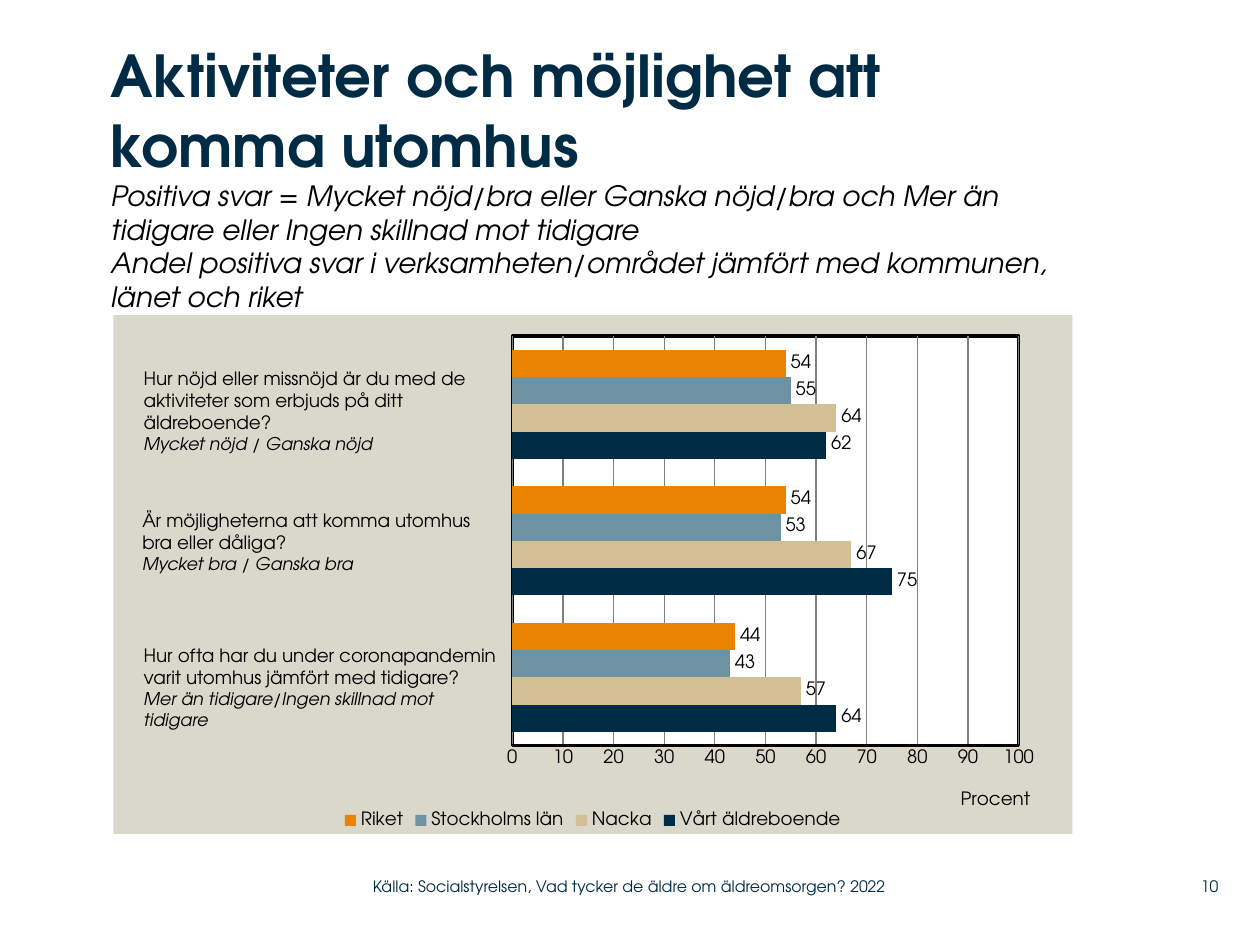
from dataclasses import dataclass

from lxml.etree import SubElement
from pptx import Presentation
from pptx.chart.data import CategoryChartData
from pptx.dml.color import RGBColor
from pptx.enum.chart import XL_CHART_TYPE as ChartType
from pptx.enum.chart import XL_LABEL_POSITION as LabelPosition
from pptx.enum.chart import XL_LEGEND_POSITION as LegendPosition
from pptx.enum.chart import XL_TICK_MARK as TickMark
from pptx.enum.text import MSO_ANCHOR as Anchor
from pptx.enum.text import PP_ALIGN as Align
from pptx.oxml import parse_xml
from pptx.oxml.ns import nsdecls, qn
from pptx.util import Pt


@dataclass(frozen=True)
class Theme:
    font: str = "TeX Gyre Adventor"
    navy: str = "002B45"
    black: str = "000000"
    white: str = "FFFFFF"
    panel: str = "DAD7CB"
    grid: str = "808080"
    title: float = 33
    subtitle: float = 16
    body: float = 10.5
    answer: float = 10
    footer: float = 9


@dataclass(frozen=True)
class Box:
    left: float
    top: float
    width: float
    height: float


@dataclass(frozen=True)
class Run:
    text: str
    size: float
    color: str
    bold: bool = False
    italic: bool = False


@dataclass(frozen=True)
class Series:
    name: str
    values: tuple[int, ...]
    color: str


@dataclass(frozen=True)
class Question:
    box: Box
    lines: tuple[str, ...]
    answer: str


THEME = Theme()

SERIES = (
    Series("Vårt äldreboende", (64, 75, 62), THEME.navy),
    Series("Nacka", (57, 67, 64), "D3BF96"),
    Series("Stockholms län", (43, 53, 55), "6F92A2"),
    Series("Riket", (44, 54, 54), "E98300"),
)

QUESTIONS = (
    Question(Box(75, 206, 216, 70.5),
             ("Hur nöjd eller missnöjd är du med de aktiviteter som erbjuds på ditt äldreboende?",),
             "Mycket nöjd / Ganska nöjd"),
    Question(Box(74.2, 287.3, 217, 58),
             ("Är möjligheterna att komma utomhus", "bra eller dåliga?"),
             "Mycket bra / Ganska bra"),
    Question(Box(75, 364.3, 217, 57),
             ("Hur ofta har du under coronapandemin varit utomhus jämfört med tidigare?",),
             "Mer än tidigare/Ingen skillnad mot tidigare"),
)


def color_of(value: str) -> RGBColor:
    return RGBColor.from_string(value)


def style_font(font, size: float, color: str, bold: bool = False, italic: bool = False) -> None:
    font.name, font.size, font.bold, font.italic = THEME.font, Pt(size), bold, italic
    font.color.rgb = color_of(color)


def add_text(slide, box: Box, paragraphs: list[list[Run]], *, inset: bool = True,
             anchor=Anchor.TOP, align=Align.LEFT) -> None:
    shape = slide.shapes.add_textbox(Pt(box.left), Pt(box.top), Pt(box.width), Pt(box.height))
    frame = shape.text_frame
    frame.word_wrap = True
    frame.vertical_anchor = anchor
    if not inset:
        frame.margin_left = frame.margin_right = frame.margin_top = frame.margin_bottom = 0
    for index, runs in enumerate(paragraphs):
        paragraph = frame.paragraphs[0] if index == 0 else frame.add_paragraph()
        paragraph.alignment = align
        for item in runs:
            # A line feed inside a run starts a new line in the same paragraph
            for number, piece in enumerate(item.text.split("\n")):
                if number:
                    paragraph.add_line_break()
                if piece:
                    run = paragraph.add_run()
                    run.text = piece
                    style_font(run.font, item.size, item.color, item.bold, item.italic)


def set_layout(parent, after: str, **values) -> None:
    """Place a chart part by fractions of the chart area."""
    for old in parent.findall(qn("c:layout")):
        parent.remove(old)
    layout = parse_xml(f"<c:layout {nsdecls('c')}><c:manualLayout/></c:layout>")
    for tag, value in values.items():
        SubElement(layout[0], qn(f"c:{tag}")).set("val", str(value))
    previous = parent.find(qn(after)) if after else None
    if previous is None:
        parent.insert(0, layout)
    else:
        previous.addnext(layout)


def shape_properties(fill: str, line: str):
    return parse_xml(f'<c:spPr {nsdecls("c", "a")}><a:solidFill><a:srgbClr val="{fill}"/></a:solidFill>'
                     f"{line}</c:spPr>")


def add_bar_chart(slide, box: Box) -> None:
    data = CategoryChartData()
    data.categories = ["1", "2", "3"]
    for item in SERIES:
        data.add_series(item.name, item.values)
    chart = slide.shapes.add_chart(ChartType.BAR_CLUSTERED, Pt(box.left), Pt(box.top),
                                   Pt(box.width), Pt(box.height), data).chart
    style_font(chart.font, THEME.body, THEME.black)
    chart.has_title = False

    # Bars and value labels
    plot = chart.plots[0]
    plot.gap_width, plot.overlap, plot.vary_by_categories = 100, 0, False
    for series, item in zip(plot.series, SERIES):
        series.format.fill.solid()
        series.format.fill.fore_color.rgb = color_of(item.color)
        labels = series.data_labels
        labels.show_value = True
        labels.position = LabelPosition.OUTSIDE_END
        style_font(labels.font, THEME.body, THEME.black)

    # Axes
    chart.category_axis.visible = False
    axis = chart.value_axis
    axis.minimum_scale, axis.maximum_scale, axis.major_unit = 0, 100, 10
    axis.major_tick_mark = axis.minor_tick_mark = TickMark.NONE
    style_font(axis.tick_labels.font, THEME.body, THEME.black)
    axis.format.line.color.rgb = color_of(THEME.black)
    axis.format.line.width = Pt(2)
    axis.has_major_gridlines = True
    axis.major_gridlines.format.line.color.rgb = color_of(THEME.grid)
    axis.major_gridlines.format.line.width = Pt(0.75)
    title = axis.axis_title
    title.text_frame.text = "Procent"
    style_font(title.text_frame.paragraphs[0].runs[0].font, THEME.body, THEME.black)
    set_layout(title._element, "c:tx", xMode="edge", yMode="edge", x=0.88, y=0.91)

    # Legend
    chart.has_legend = True
    chart.legend.position = LegendPosition.BOTTOM
    chart.legend.include_in_layout = False
    style_font(chart.legend.font, THEME.body, THEME.black)

    # Plot area and background
    chart_space = chart._chartSpace
    plot_area = chart_space.chart.plotArea
    set_layout(plot_area, "", layoutTarget="inner", xMode="edge", yMode="edge",
               x=0.416, y=0.041, w=0.528, h=0.789)
    border = f'<a:ln w="{Pt(2)}"><a:solidFill><a:srgbClr val="{THEME.black}"/></a:solidFill></a:ln>'
    plot_area.append(shape_properties(THEME.white, border))
    chart_space.chart.addnext(shape_properties(THEME.panel, "<a:ln><a:noFill/></a:ln>"))


def main() -> None:
    presentation = Presentation()
    presentation.slide_width, presentation.slide_height = Pt(720), Pt(540)
    slide = presentation.slides.add_slide(presentation.slide_layouts[6])

    # Heading
    add_text(slide, Box(63.4, 23, 561.6, 136), [[
        Run("Aktiviteter och möjlighet att komma utomhus", THEME.title, THEME.navy, bold=True),
        Run("\nPositiva svar = Mycket nöjd/bra eller Ganska nöjd/bra och Mer än tidigare eller "
            "Ingen skillnad mot tidigare\nAndel positiva svar i verksamheten/området jämfört med "
            "kommunen, länet och riket", THEME.subtitle, THEME.black, italic=True),
    ]], inset=False)

    # Chart with the questions beside its bars
    add_bar_chart(slide, Box(64.8, 180, 548, 296.6))
    for question in QUESTIONS:
        paragraphs = [[Run(line, THEME.body, THEME.black)] for line in question.lines]
        paragraphs.append([Run(question.answer, THEME.answer, THEME.black, italic=True)])
        add_text(slide, question.box, paragraphs)

    # Footer
    for left, width, text, align in (
        (213.1, 319, "Källa: Socialstyrelsen, Vad tycker de äldre om äldreomsorgen? 2022", Align.LEFT),
        (662.4, 33.8, "10", Align.RIGHT),
    ):
        add_text(slide, Box(left, 496, width, 21), [[Run(text, THEME.footer, THEME.navy)]],
                 inset=False, anchor=Anchor.MIDDLE, align=align)

    presentation.save("out.pptx")


if __name__ == "__main__":
    main()
